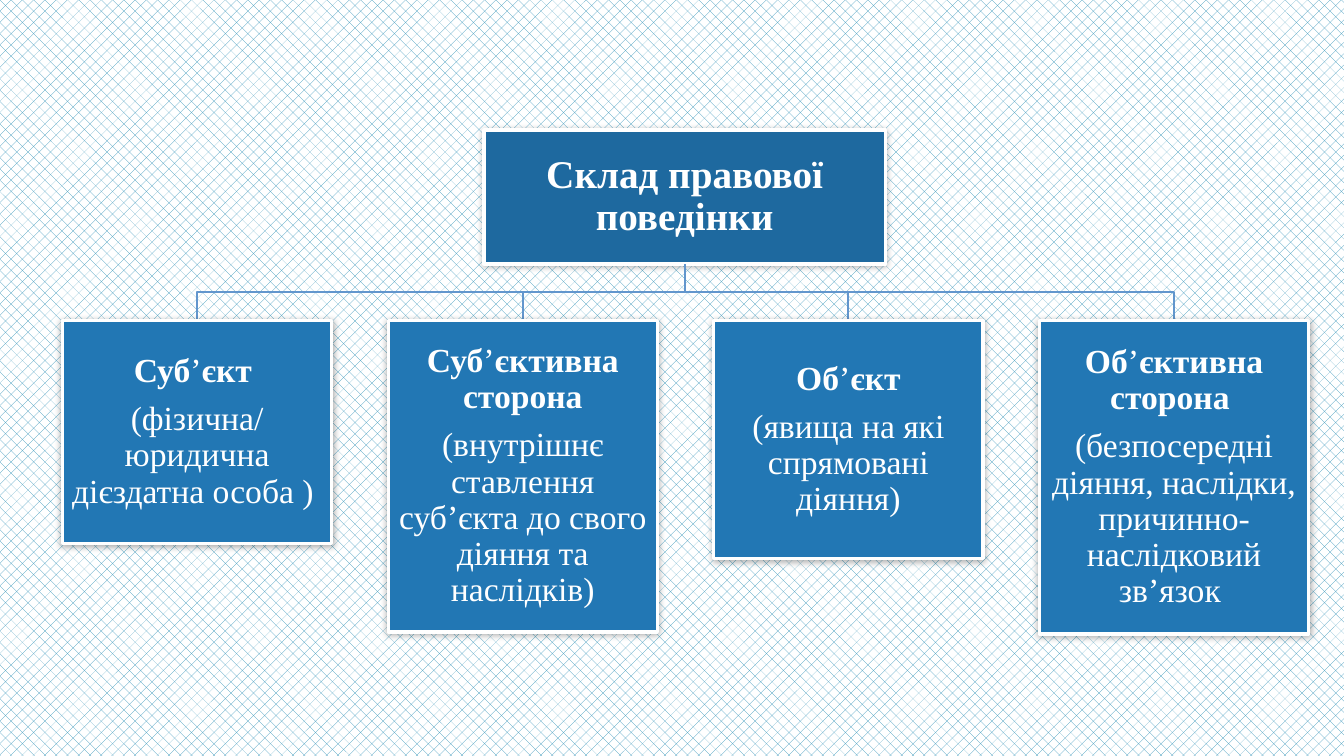
"""Build a slide showing the elements of lawful conduct as a tree."""
from lxml import etree
from pptx import Presentation
from pptx.dml.color import RGBColor
from pptx.enum.dml import MSO_PATTERN
from pptx.enum.shapes import MSO_SHAPE
from pptx.enum.text import MSO_ANCHOR, MSO_AUTO_SIZE, PP_ALIGN
from pptx.oxml import parse_xml
from pptx.util import Inches, Pt

RECT = MSO_SHAPE.RECTANGLE
MIDDLE = MSO_ANCHOR.MIDDLE
CENTER = PP_ALIGN.CENTER
NO_AUTOFIT = MSO_AUTO_SIZE.NONE
PCT_25 = MSO_PATTERN.PERCENT_25

FONT = "Times New Roman"
WHITE, TEAL = "FFFFFF", "3494BA"
ROOT_BLUE, BRANCH_BLUE, LINK_BLUE = "1E699F", "2277B4", "6296CD"
APOSTROPHE = "’"

ROOT = "Склад правової поведінки"
BRANCHES = [
    ("Суб’єкт ", "(фізична/юридична дієздатна особа ) ", 2.21),
    ("Суб’єктивна сторона",
     "(внутрішнє ставлення суб’єкта до свого діяння та наслідків)", 3.09),
    ("Об’єкт", "(явища на які спрямовані діяння)", 2.36),
    ("Об’єктивна сторона ",
     "(безпосередні діяння, наслідки, причинно-наслідковий зв’язок ", 3.11),
]

ROOT_LEFT, ROOT_TOP, ROOT_WIDTH, ROOT_HEIGHT = 4.8, 1.29, 3.98, 1.33
BRANCH_LEFT, BRANCH_TOP, BRANCH_WIDTH, BRANCH_STEP = 0.62, 3.18, 2.67, 3.23
INSET = 0.02

DRAWING_NS = "http://schemas.openxmlformats.org/drawingml/2006/main"
SHADOW = (
    f'<a:outerShdw xmlns:a="{DRAWING_NS}" blurRad="{Pt(5)}" dist="{Pt(1)}" '
    'dir="5400000" algn="ctr" rotWithShape="0">'
    '<a:srgbClr val="000000"><a:alpha val="32000"/></a:srgbClr></a:outerShdw>'
)


def color(hex_value):
    """Turn a hex string into a colour."""
    return RGBColor.from_string(hex_value)


def write(frame, paragraphs, size):
    """Fill a frame with paragraphs, each a list of (text, bold) runs."""
    frame.word_wrap = True
    frame.auto_size = NO_AUTOFIT
    frame.vertical_anchor = MIDDLE
    frame.margin_left = frame.margin_right = Inches(INSET)
    frame.margin_top = frame.margin_bottom = Inches(INSET)
    for index, runs in enumerate(paragraphs):
        paragraph = frame.add_paragraph() if index else frame.paragraphs[0]
        paragraph.alignment = CENTER
        paragraph.line_spacing = 0.9
        paragraph.space_before = Pt(0)
        paragraph.space_after = Pt(size * 0.35)
        for text, bold in runs:
            run = paragraph.add_run()
            run.text = text
            run.font.name = FONT
            run.font.size = Pt(size)
            run.font.bold = bold
            run.font.color.rgb = color(WHITE)


def style_box(box, fill):
    """Give a box its fill, white border and soft shadow."""
    box.fill.solid()
    box.fill.fore_color.rgb = color(fill)
    box.line.color.rgb = color(WHITE)
    box.line.width = Pt(2.25)
    effects = etree.SubElement(box.element.spPr, f"{{{DRAWING_NS}}}effectLst")
    effects.append(parse_xml(SHADOW))


def add_link(slide, start, end):
    """Draw a stepped link from the root down to a branch."""
    (x1, y1), (x2, y2) = start, end
    middle = (y1 + y2) / 2
    builder = slide.shapes.build_freeform(Inches(x1), Inches(y1))
    steps = [(x1, middle), (x2, middle), (x2, y2)]
    builder.add_line_segments([(Inches(x), Inches(y)) for x, y in steps], close=False)
    link = builder.convert_to_shape()
    link.fill.background()
    link.line.color.rgb = color(LINK_BLUE)
    link.line.width = Pt(1.5)
    link.shadow.inherit = False


def heading_runs(heading):
    """Split a bold heading around its regular apostrophe."""
    before, after = heading.split(APOSTROPHE)
    return [(before, True), (APOSTROPHE, False), (after, True)]


def main():
    """Create the presentation and save it."""
    deck = Presentation()
    deck.slide_width, deck.slide_height = Inches(13.33), Inches(7.5)
    slide = deck.slides.add_slide(deck.slide_layouts[5])

    background = slide.background.fill
    background.patterned()
    background.pattern = PCT_25
    background.fore_color.rgb = color(TEAL)
    background.back_color.rgb = color(WHITE)

    root = slide.shapes.title
    root.left, root.top = Inches(ROOT_LEFT), Inches(ROOT_TOP)
    root.width, root.height = Inches(ROOT_WIDTH), Inches(ROOT_HEIGHT)
    style_box(root, ROOT_BLUE)
    write(root.text_frame, [[(ROOT, True)]], size=28)

    root_foot = (ROOT_LEFT + ROOT_WIDTH / 2, ROOT_TOP + ROOT_HEIGHT)
    for index, (heading, detail, height) in enumerate(BRANCHES):
        left = BRANCH_LEFT + index * BRANCH_STEP
        add_link(slide, root_foot, (left + BRANCH_WIDTH / 2, BRANCH_TOP))
        branch = slide.shapes.add_shape(
            RECT, Inches(left), Inches(BRANCH_TOP), Inches(BRANCH_WIDTH), Inches(height))
        style_box(branch, BRANCH_BLUE)
        write(branch.text_frame, [heading_runs(heading), [(detail, False)]], size=24)

    deck.save("out.pptx")


if __name__ == "__main__":
    main()
